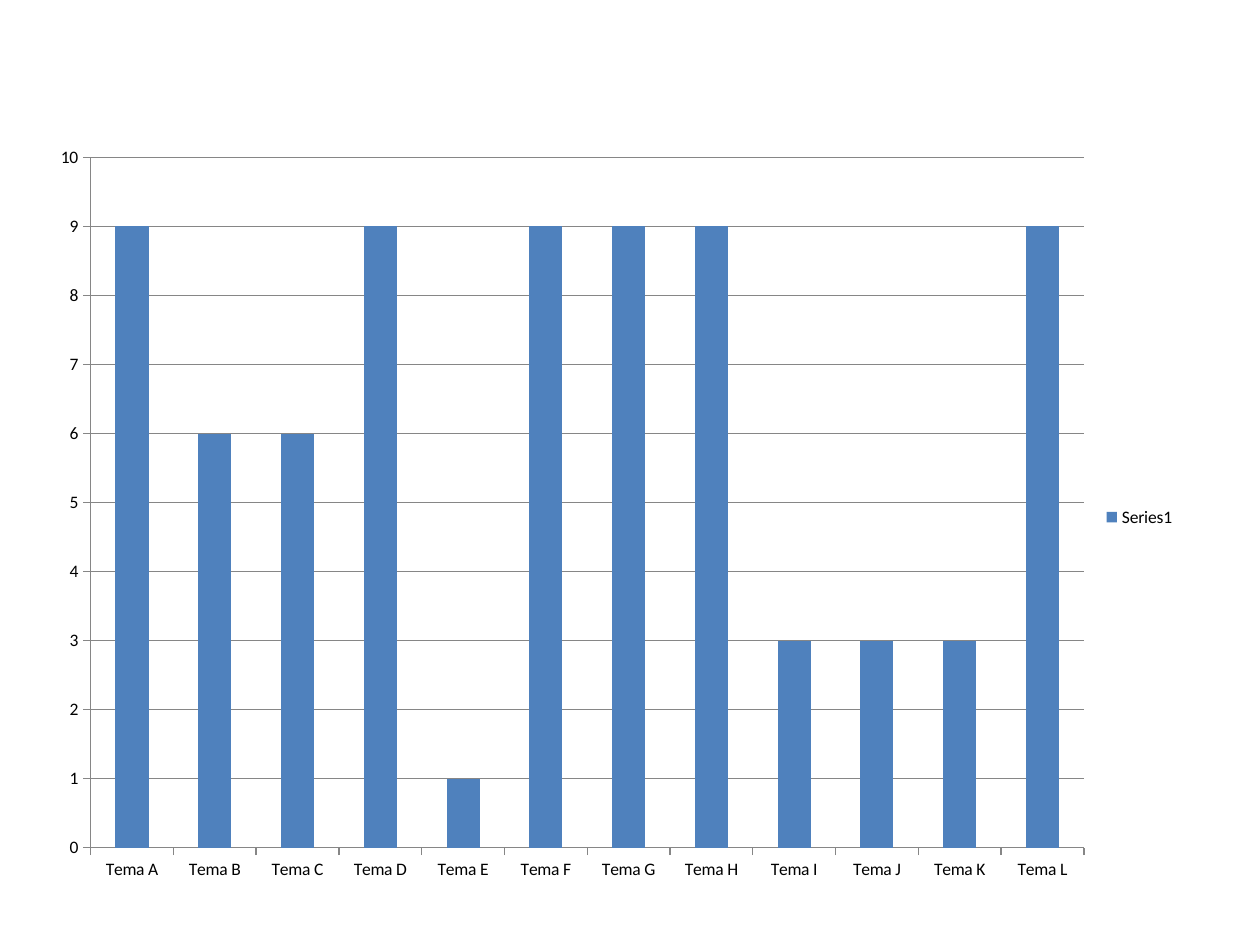
"""Build a slide with a column chart of scores by theme."""

from dataclasses import dataclass

import lxml.etree
import pptx
import pptx.chart.axis
import pptx.chart.chart
import pptx.chart.data
import pptx.dml.color
import pptx.dml.line
import pptx.enum.chart
import pptx.oxml.ns
import pptx.util

COLORS = {"background": "FFFFFF", "bar": "4F81BD", "line": "868686", "text": "000000"}
FONT_NAME = "Calibri"
FONT_SIZE = 10


@dataclass(frozen=True)
class Theme:
    name: str
    score: int


@dataclass(frozen=True)
class Box:
    left: float
    top: float
    width: float
    height: float


SCORES = (9, 6, 6, 9, 1, 9, 9, 9, 3, 3, 3, 9)
THEMES = [Theme(f"Tema {letter}", score) for letter, score in zip("ABCDEFGHIJKL", SCORES)]
CHART_BOX = Box(31, 82.8, 648, 425.5)
PLOT_BOX = Box(20.74, 7.23, 567.65, 394.44)


def color(name: str) -> pptx.dml.color.RGBColor:
    return pptx.dml.color.RGBColor.from_string(COLORS[name])


def style_line(line: pptx.dml.line.LineFormat) -> None:
    line.color.rgb = color("line")
    line.width = pptx.util.Pt(0.75)


def style_axis(axis: pptx.chart.axis._BaseAxis, gridlines: bool) -> None:
    axis.major_tick_mark = pptx.enum.chart.XL_TICK_MARK.OUTSIDE
    axis.minor_tick_mark = pptx.enum.chart.XL_TICK_MARK.NONE
    axis.has_major_gridlines = gridlines
    style_line(axis.format.line)
    if gridlines:
        style_line(axis.major_gridlines.format.line)


def place_plot(chart: pptx.chart.chart.Chart, plot_box: Box, chart_box: Box) -> None:
    qualified = pptx.oxml.ns.qn
    plot_area = chart._chartSpace.find(f".//{qualified('c:plotArea')}")
    for layout in plot_area.findall(qualified("c:layout")):
        plot_area.remove(layout)
    layout = lxml.etree.Element(qualified("c:layout"))
    plot_area.insert(0, layout)
    manual = lxml.etree.SubElement(layout, qualified("c:manualLayout"))
    settings = {
        "layoutTarget": "inner",
        "xMode": "edge",
        "yMode": "edge",
        "x": plot_box.left / chart_box.width,
        "y": plot_box.top / chart_box.height,
        "w": plot_box.width / chart_box.width,
        "h": plot_box.height / chart_box.height,
    }
    for tag, value in settings.items():
        lxml.etree.SubElement(manual, qualified(f"c:{tag}")).set("val", str(value))


def add_score_chart(slide: pptx.slide.Slide, themes: list[Theme], box: Box) -> None:
    data = pptx.chart.data.CategoryChartData()
    data.categories = [theme.name for theme in themes]
    data.add_series("Series1", [theme.score for theme in themes])
    chart = slide.shapes.add_chart(
        pptx.enum.chart.XL_CHART_TYPE.COLUMN_CLUSTERED,
        pptx.util.Pt(box.left),
        pptx.util.Pt(box.top),
        pptx.util.Pt(box.width),
        pptx.util.Pt(box.height),
        data,
    ).chart
    chart.has_title = False
    chart.font.name = FONT_NAME
    chart.font.size = pptx.util.Pt(FONT_SIZE)
    chart.font.color.rgb = color("text")
    chart.has_legend = True
    chart.legend.position = pptx.enum.chart.XL_LEGEND_POSITION.RIGHT
    chart.legend.include_in_layout = False
    style_axis(chart.category_axis, gridlines=False)
    style_axis(chart.value_axis, gridlines=True)
    chart.value_axis.minimum_scale = 0
    chart.value_axis.maximum_scale = 10
    chart.value_axis.major_unit = 1
    plot = chart.plots[0]
    plot.gap_width = 150
    plot.vary_by_categories = False
    fill = plot.series[0].format.fill
    fill.solid()
    fill.fore_color.rgb = color("bar")
    place_plot(chart, PLOT_BOX, box)


def main() -> None:
    presentation = pptx.Presentation()
    presentation.slide_width = pptx.util.Pt(720)
    presentation.slide_height = pptx.util.Pt(540)
    slide = presentation.slides.add_slide(presentation.slide_layouts[6])
    slide.background.fill.solid()
    slide.background.fill.fore_color.rgb = color("background")
    add_score_chart(slide, THEMES, CHART_BOX)
    presentation.save("out.pptx")


if __name__ == "__main__":
    main()
